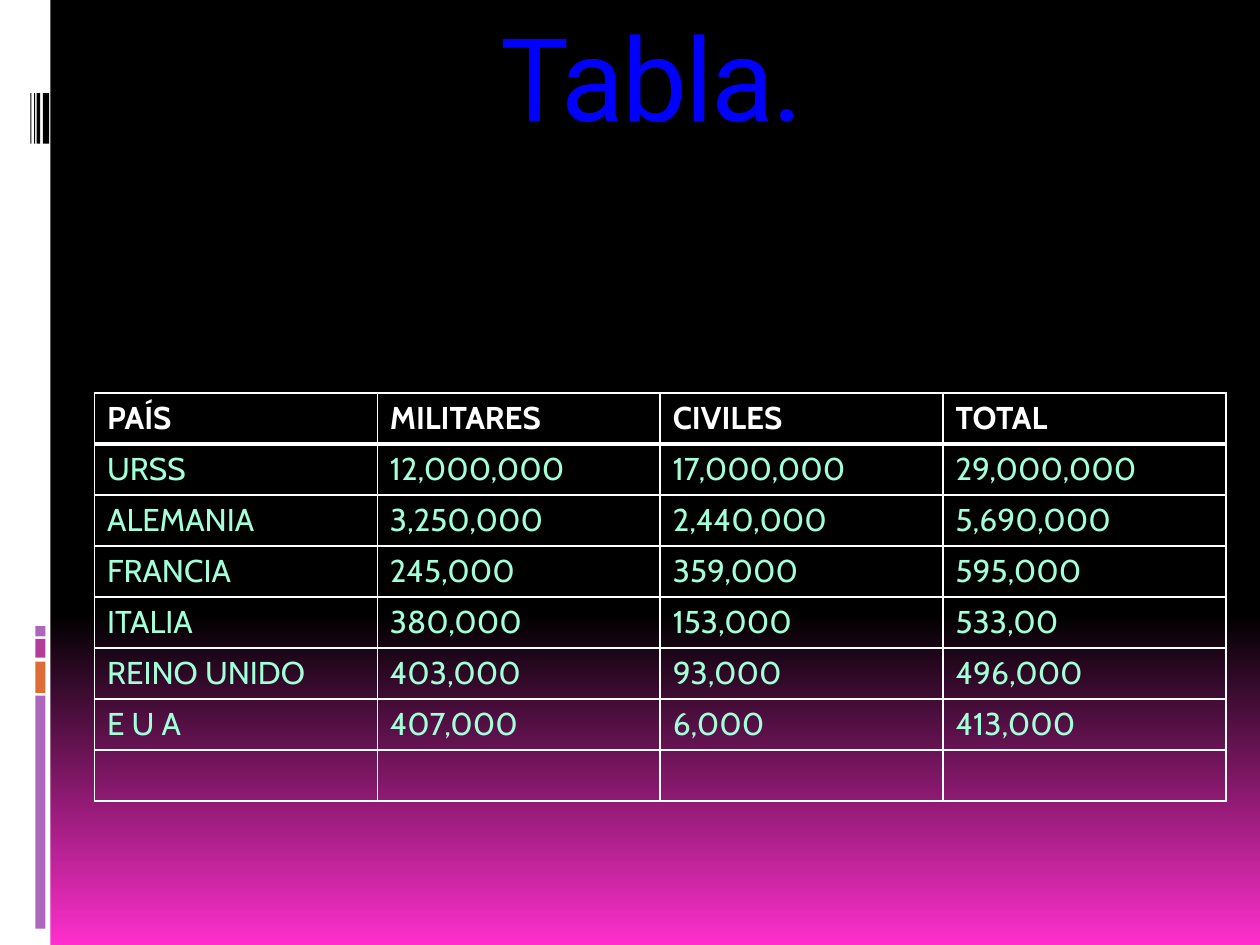
from lxml.etree import SubElement
from pptx import Presentation
from pptx.dml.color import RGBColor
from pptx.enum.shapes import MSO_SHAPE as Shape
from pptx.enum.text import MSO_ANCHOR as Anchor, PP_ALIGN as Align
from pptx.oxml.ns import qn
from pptx.util import Inches, Pt

BLACK = RGBColor(0x00, 0x00, 0x00)
WHITE = RGBColor(0xFF, 0xFF, 0xFF)
PINK = RGBColor(0xFF, 0x2F, 0xCD)
BLUE = RGBColor(0x00, 0x00, 0xFF)
MINT = RGBColor(0xA3, 0xFF, 0xDA)
PURPLE = RGBColor(0xAC, 0x66, 0xBB)
ORANGE = RGBColor(0xDE, 0x6C, 0x36)
MAGENTA = RGBColor(0xB1, 0x3F, 0x9A)

CASUALTIES = [
    ("PAÍS", "MILITARES", "CIVILES", "TOTAL"),
    ("URSS", "12,000,000", "17,000,000", "29,000,000"),
    ("ALEMANIA", "3,250,000", "2,440,000", "5,690,000"),
    ("FRANCIA", "245,000", "359,000", "595,000"),
    ("ITALIA", "380,000", "153,000", "533,00"),
    ("REINO UNIDO", "403,000", "93,000", "496,000"),
    ("E U A", "407,000", "6,000", "413,000"),
    ("", "", "", ""),
]


class SlideBuilder:
    title_font = "Roboto"
    body_font = "Cabin"

    def __init__(self, slide):
        self.slide = slide

    def background(self, start, end, start_position):
        fill = self.slide.background.fill
        fill.gradient()
        fill.gradient_angle = 270
        first, last = fill.gradient_stops
        first.color.rgb, first.position = start, start_position
        last.color.rgb, last.position = end, 1

    def bar(self, left, top, width, height, color):
        shape = self.slide.shapes.add_shape(
            Shape.RECTANGLE, Inches(left), Inches(top), Inches(width), Inches(height))
        shape.shadow.inherit = False
        shape.fill.solid()
        shape.fill.fore_color.rgb = color
        shape.line.fill.background()

    def format_font(self, font, name, size, color, bold=False):
        font.name = name
        font.size = Pt(size)
        font.bold = bold
        font.color.rgb = color

    def title(self, text, left, top, width, height):
        box = self.slide.shapes.add_textbox(
            Inches(left), Inches(top), Inches(width), Inches(height))
        frame = box.text_frame
        frame.word_wrap = True
        frame.vertical_anchor = Anchor.TOP
        frame.text = text
        paragraph = frame.paragraphs[0]
        paragraph.alignment = Align.CENTER
        run = paragraph.runs[0]
        self.format_font(run.font, self.title_font, 66, BLUE)
        run.font._element.set("spc", "-100")

    def cell_borders(self, cell, color, widths):
        properties = cell._tc.get_or_add_tcPr()
        for index, (side, width) in enumerate(widths.items()):
            line = properties.makeelement(qn(f"a:{side}"), {"w": str(Pt(width))})
            fill = SubElement(line, qn("a:solidFill"))
            SubElement(fill, qn("a:srgbClr"), {"val": str(color)})
            properties.insert(index, line)

    def table(self, rows, left, top, width, height):
        table = self.slide.shapes.add_table(
            len(rows), len(rows[0]),
            Inches(left), Inches(top), Inches(width), Inches(height)).table
        for row_index, values in enumerate(rows):
            header = row_index == 0
            widths = {"lnL": 1, "lnR": 1,
                      "lnT": 3 if row_index == 1 else 1,
                      "lnB": 3 if header else 1}
            for column_index, value in enumerate(values):
                cell = table.cell(row_index, column_index)
                cell.fill.background()
                cell.text_frame.text = value
                paragraph = cell.text_frame.paragraphs[0]
                fonts = [run.font for run in paragraph.runs] or [paragraph.font]
                for font in fonts:
                    self.format_font(font, self.body_font, 18,
                                     WHITE if header else MINT, header)
                self.cell_borders(cell, WHITE, widths)


def main():
    presentation = Presentation()
    presentation.slide_width = Inches(10)
    presentation.slide_height = Inches(7.5)
    builder = SlideBuilder(presentation.slides.add_slide(presentation.slide_layouts[6]))
    builder.background(BLACK, PINK, 0.65)

    # White side strip
    builder.bar(0, 0, 0.4, 7.5, WHITE)

    # Coloured bars at the bottom of the strip
    for top, height, color in [(5.52, 1.85, PURPLE), (5.25, 0.25, ORANGE),
                               (5.07, 0.15, MAGENTA), (4.97, 0.08, PURPLE)]:
        builder.bar(0.28, top, 0.08, height, color)

    # Black stripes at the top of the strip
    for left, width in [(0.34, 0.05), (0.29, 0.03), (0.27, 0.01), (0.24, 0.01)]:
        builder.bar(left, 0.74, width, 0.4, BLACK)

    # Title and casualty table
    builder.title("Tabla.", 0.35, 0, 9.65, 1.56)
    builder.table(CASUALTIES, 0.75, 3.12, 8.98, 3.24)

    presentation.save("out.pptx")


if __name__ == "__main__":
    main()
